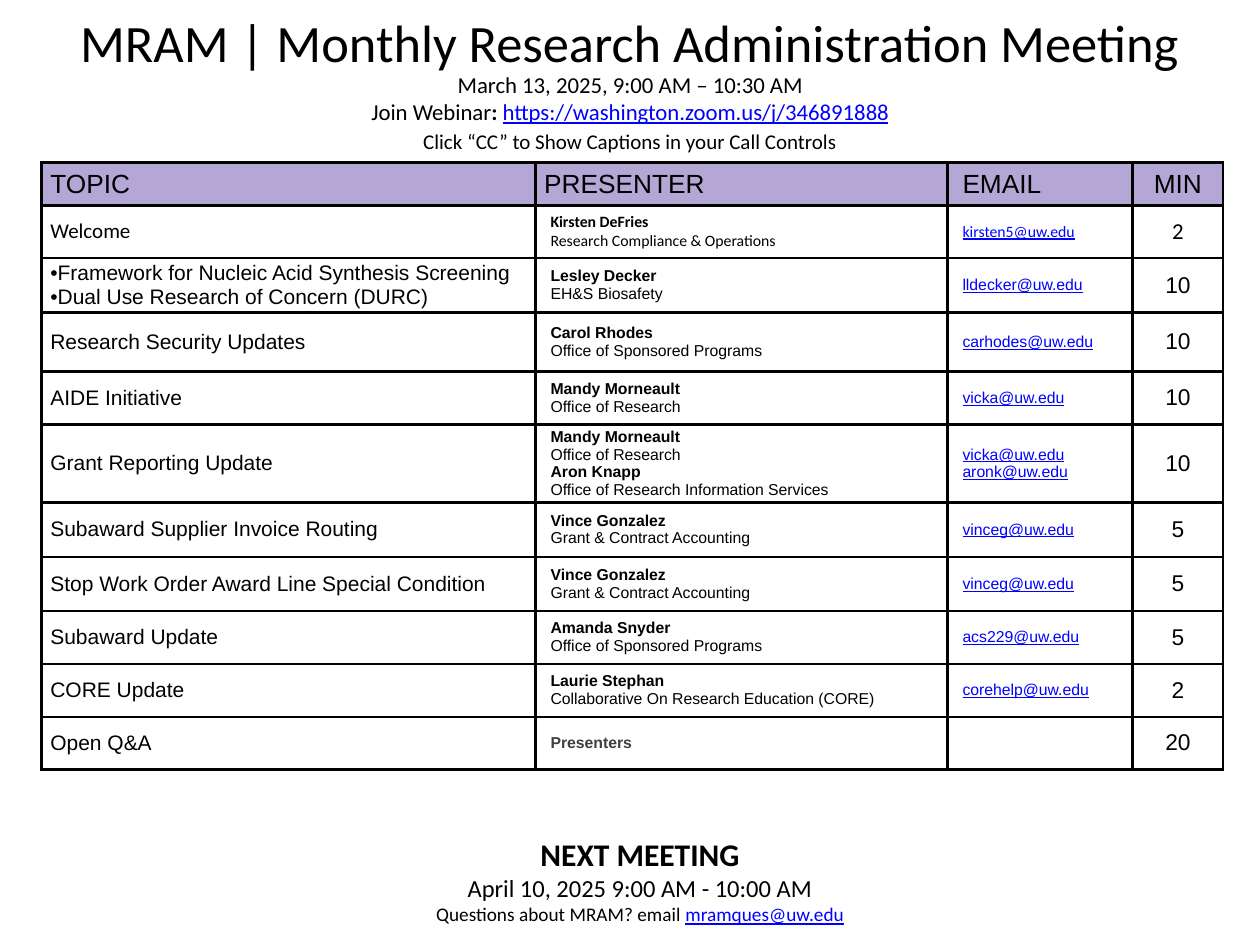
import pptx
import pptx.dml.color
import pptx.enum.text
import pptx.oxml
import pptx.oxml.ns
import pptx.util

Inches = pptx.util.Inches
Pt = pptx.util.Pt
ALIGN = pptx.enum.text.PP_ALIGN
ANCHOR = pptx.enum.text.MSO_ANCHOR

BLACK, WHITE, LINK, LILAC, GREY = "000000", "FFFFFF", "0000FF", "B4A7D6", "3F3F3F"
COLUMNS = [3.92, 3.27, 1.47, 0.72]
INSETS = [0.07, 0.12, 0.12, 0.07]
HEADINGS = ["TOPIC", "PRESENTER", "EMAIL", "MIN"]

# Row height, topic lines, (name, office) pairs, email lines, minutes, font
AGENDA = [
    (0.42, ["Welcome"], [("Kirsten DeFries", "Research Compliance & Operations")],
     ["kirsten5@uw.edu"], "2", "Calibri"),
    (0.43, ["•Framework for Nucleic Acid Synthesis Screening",
            "•Dual Use Research of Concern (DURC)"],
     [("Lesley Decker", "EH&S Biosafety")], ["lldecker@uw.edu"], "10", "Arial"),
    (0.47, ["Research Security Updates"], [("Carol Rhodes", "Office of Sponsored Programs")],
     ["carhodes@uw.edu"], "10", "Arial"),
    (0.42, ["AIDE Initiative"], [("Mandy Morneault", "Office of Research")],
     ["vicka@uw.edu"], "10", "Arial"),
    (0.62, ["Grant Reporting Update"],
     [("Mandy Morneault", "Office of Research"),
      ("Aron Knapp", "Office of Research Information Services")],
     ["vicka@uw.edu", "aronk@uw.edu"], "10", "Arial"),
    (0.43, ["Subaward Supplier Invoice Routing"],
     [("Vince Gonzalez", "Grant & Contract Accounting")], ["vinceg@uw.edu"], "5", "Arial"),
    (0.43, ["Stop Work Order Award Line Special Condition"],
     [("Vince Gonzalez", "Grant & Contract Accounting")], ["vinceg@uw.edu"], "5", "Arial"),
    (0.42, ["Subaward Update"], [("Amanda Snyder", "Office of Sponsored Programs")],
     ["acs229@uw.edu"], "5", "Arial"),
    (0.42, ["CORE Update"], [("Laurie Stephan", "Collaborative On Research Education (CORE)")],
     ["corehelp@uw.edu"], "2", "Arial"),
    (0.42, ["Open Q&A"], [("Presenters", None)], [], "20", "Arial"),
]


def color(value):
    return pptx.dml.color.RGBColor.from_string(value)


def span(text, size, font="Calibri", fill=BLACK, bold=False, underline=False):
    """Describe one run of text."""
    return text, size, font, fill, bold, underline


def write(frame, paras, align=ALIGN.LEFT, spacing=None):
    """Fill a text frame with paragraphs, each a list of spans."""
    for index, spans in enumerate(paras):
        para = frame.paragraphs[0] if index == 0 else frame.add_paragraph()
        para.alignment = align
        if spacing:
            para.line_spacing = spacing[index]
        for text, size, font, fill, bold, underline in spans:
            run = para.add_run()
            run.text = text
            run.font.size = Pt(size)
            run.font.name = font
            run.font.color.rgb = color(fill)
            run.font.bold = bold
            run.font.underline = underline


def set_frame(frame, anchor):
    frame.word_wrap = True
    frame.auto_size = pptx.enum.text.MSO_AUTO_SIZE.NONE
    frame.vertical_anchor = anchor
    frame.margin_left = frame.margin_right = Inches(0.1)
    frame.margin_top = frame.margin_bottom = Inches(0.1)


def add_title(page, text):
    title = page.shapes.title
    title.left, title.top = Inches(0.01), Inches(-0.05)
    title.width, title.height = Inches(9.98), Inches(0.82)
    set_frame(title.text_frame, ANCHOR.MIDDLE)
    write(title.text_frame, [[span(text, 30)]], ALIGN.CENTER, [0.9])


def add_centered_text(page, place, paras, spacing=None):
    box = page.shapes.add_textbox(*map(Inches, place))
    set_frame(box.text_frame, ANCHOR.TOP)
    write(box.text_frame, paras, ALIGN.CENTER, spacing)


def add_borders(cell):
    """Draw a black line on all four sides; borders come before the fill."""
    properties = cell._tc.get_or_add_tcPr()
    for index, side in enumerate(("lnL", "lnR", "lnT", "lnB")):
        line = pptx.oxml.parse_xml(
            f'<a:{side} {pptx.oxml.ns.nsdecls("a")} w="{Pt(1.5)}"><a:solidFill>'
            f'<a:srgbClr val="{BLACK}"/></a:solidFill></a:{side}>')
        properties.insert(index, line)


def fill_cell(cell, paras, inset, fill, align):
    cell.fill.solid()
    cell.fill.fore_color.rgb = color(fill)
    add_borders(cell)
    cell.vertical_anchor = ANCHOR.MIDDLE
    cell.margin_left = cell.margin_right = Inches(inset)
    cell.margin_top = cell.margin_bottom = 0
    write(cell.text_frame, paras, align)


def agenda_cells(topics, presenters, emails, minutes, font):
    """Return the paragraphs of the four cells in an agenda row."""
    people = []
    for name, office in presenters:
        people.append([span(name, 9, font, BLACK if office else GREY, bold=True)])
        if office:
            people.append([span(office, 9, font)])
    return [
        [[span(topic, 12, font)] for topic in topics],
        people,
        [[span(email, 9, font, LINK, underline=True)] for email in emails],
        [[span(minutes, 13, font)]],
    ]


def add_agenda(page):
    heights = [0.34] + [row[0] for row in AGENDA]
    table = page.shapes.add_table(
        len(heights), len(COLUMNS), Inches(0.33), Inches(1.29),
        Inches(sum(COLUMNS)), Inches(sum(heights))).table
    for column, width in zip(table.columns, COLUMNS):
        column.width = Inches(width)
    for row, height in zip(table.rows, heights):
        row.height = Inches(height)

    header = [[[span(heading, 15, "Arial")]] for heading in HEADINGS]
    rows = [header] + [agenda_cells(*row[1:]) for row in AGENDA]
    for r, cells in enumerate(rows):
        for c, paras in enumerate(cells):
            # The presenter heading sits further left than the names below it
            inset = 0.07 if (r, c) == (0, 1) else INSETS[c]
            align = ALIGN.CENTER if c == 3 else ALIGN.LEFT
            fill_cell(table.cell(r, c), paras, inset, WHITE if r else LILAC, align)


def main():
    deck = pptx.Presentation()
    deck.slide_width, deck.slide_height = Inches(10), Inches(7.5)
    page = deck.slides.add_slide(deck.slide_layouts.get_by_name("Title Only"))

    add_title(page, "MRAM | Monthly Research Administration Meeting")

    # Date and webinar link
    add_centered_text(page, (0, 0.46, 10, 1), [
        [span("March 13, 2025, 9:00 AM – 10:30 AM", 13)],
        [span("Join Webinar", 13), span(": ", 13, bold=True),
         span("https://washington.zoom.us/j/346891888", 13, fill=LINK, underline=True)],
        [span("Click “CC” to Show Captions in your Call Controls", 12)],
    ], [1, 1, 1.15])

    add_agenda(page)

    # Next meeting and contact
    add_centered_text(page, (0.09, 6.53, 9.98, 0.88), [
        [span("NEXT MEETING", 18, bold=True)],
        [span("April 10, 2025 9:00 AM - 10:00 AM", 14)],
        [span("Questions about MRAM? email ", 11),
         span("mramques@uw.edu", 11, fill=LINK, underline=True)],
    ])

    deck.save("out.pptx")


if __name__ == "__main__":
    main()
